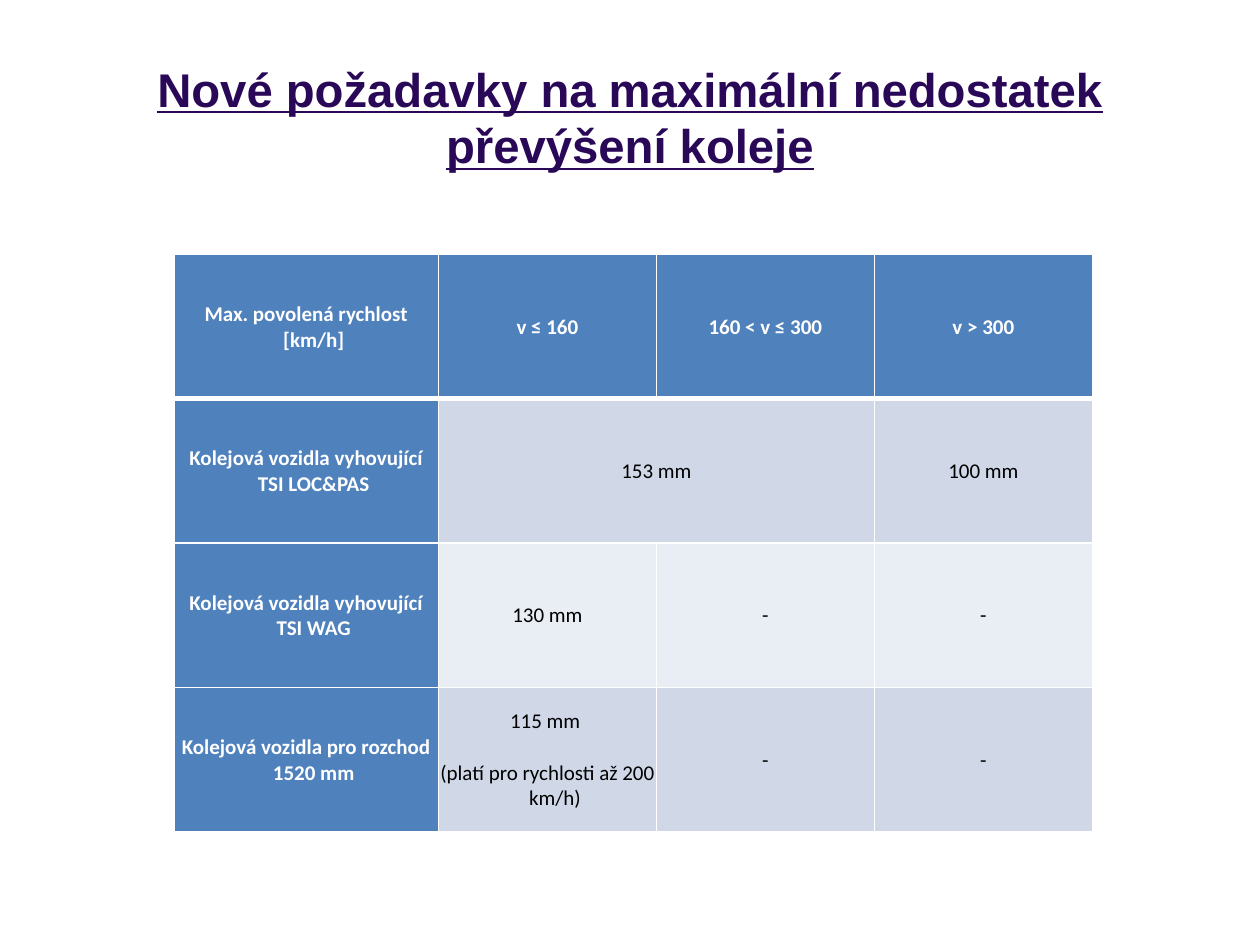
from lxml import etree
from pptx import Presentation, util as u
from pptx.dml.color import RGBColor
from pptx.enum import text
from pptx.oxml.ns import qn

WHITE, BLACK, PURPLE = "FFFFFF", "000000", "2A0858"
BLUE, BAND_DARK, BAND_LIGHT = "4F81BD", "D0D8E8", "E9EDF4"


def colour(code):
    return RGBColor.from_string(code)


class SlideBuilder:
    title_font, table_font = "Arial", "Calibri"
    title_size, table_size = 27, 12
    indent, paragraph_gap = 0.12, 15

    def __init__(self, page):
        self.page = page

    def add_span(self, para, wording, font, size, code, bold, underline=False):
        span = para.add_run()
        span.text = wording
        span.font.name, span.font.size = font, u.Pt(size)
        span.font.bold, span.font.underline = bold, underline
        span.font.color.rgb = colour(code)

    def title(self, wording, left, top, width, height):
        box = self.page.shapes.add_textbox(*map(u.Inches, (left, top, width, height)))
        frame = box.text_frame
        frame.word_wrap = True
        frame.vertical_anchor = text.MSO_ANCHOR.MIDDLE
        para = frame.paragraphs[0]
        para.alignment = text.PP_ALIGN.CENTER
        self.add_span(para, wording, self.title_font, self.title_size, PURPLE, True, True)

    def borders(self, cell, widths):
        properties = cell._tc.get_or_add_tcPr()
        for side, width in zip("LRTB", widths):
            line = etree.SubElement(properties, qn(f"a:ln{side}"), w=str(u.Pt(width)))
            fill = etree.SubElement(line, qn("a:solidFill"))
            etree.SubElement(fill, qn("a:srgbClr"), val=WHITE)

    def cell(self, cell, paragraphs, fill, code, bold, widths):
        self.borders(cell, widths)
        cell.fill.solid()
        cell.fill.fore_color.rgb = colour(fill)
        cell.vertical_anchor = text.MSO_ANCHOR.MIDDLE
        cell.margin_left = cell.margin_right = cell.margin_top = u.Inches(0.01)
        cell.margin_bottom = 0
        frame = cell.text_frame
        for number, wording in enumerate(paragraphs):
            para = frame.add_paragraph() if number else frame.paragraphs[0]
            para.alignment = text.PP_ALIGN.CENTER
            if number:
                para.space_before = u.Pt(self.paragraph_gap)
            properties = para._p.get_or_add_pPr()
            properties.set("marL", str(u.Inches(self.indent)))
            properties.set("indent", str(-u.Inches(self.indent)))
            self.add_span(para, wording, self.table_font, self.table_size, code, bold)

    def table(self, rows, left, top, column_widths, height, merges):
        frame = self.page.shapes.add_table(
            len(rows), len(column_widths), u.Inches(left), u.Inches(top),
            u.Inches(sum(column_widths)), u.Inches(height))
        table = frame.table
        for column, width in zip(table.columns, column_widths):
            column.width = u.Inches(width)
        for row in table.rows:
            row.height = u.Inches(height / len(rows))
        for first, last in merges:
            table.cell(*first).merge(table.cell(*last))
        for r, row in enumerate(rows):
            # Thick rule between the header and the body
            widths = (1, 1, 3 if r == 1 else 1, 3 if r == 0 else 1)
            for c, paragraphs in enumerate(row):
                heading = r == 0 or c == 0
                band = BAND_DARK if r % 2 else BAND_LIGHT
                self.cell(table.cell(r, c), paragraphs, BLUE if heading else band,
                          WHITE if heading else BLACK, heading, widths)


def main():
    deck = Presentation()
    deck.slide_width, deck.slide_height = u.Inches(10), u.Inches(7.5)
    builder = SlideBuilder(deck.slides.add_slide(deck.slide_layouts[6]))

    # Title
    builder.title("Nové požadavky na maximální nedostatek převýšení koleje",
                  0.5, 0.3, 9, 1.25)

    # Cant deficiency by speed and vehicle type
    rows = [
        [["Max. povolená rychlost [km/h]"], ["v ≤ 160"], ["160 < v ≤ 300"], ["v > 300"]],
        [["Kolejová vozidla vyhovující TSI LOC&PAS"], ["153 mm"], [], ["100 mm"]],
        [["Kolejová vozidla vyhovující TSI WAG"], ["130 mm"], ["-"], ["-"]],
        [["Kolejová vozidla pro rozchod 1520 mm"],
         ["115 mm ", "(platí pro rychlosti až 200 km/h)"], ["-"], ["-"]],
    ]
    builder.table(rows, 1.38, 2.02, [2.1] + [1.73] * 3, 4.58, [((1, 1), (1, 2))])

    deck.save("out.pptx")


if __name__ == "__main__":
    main()
